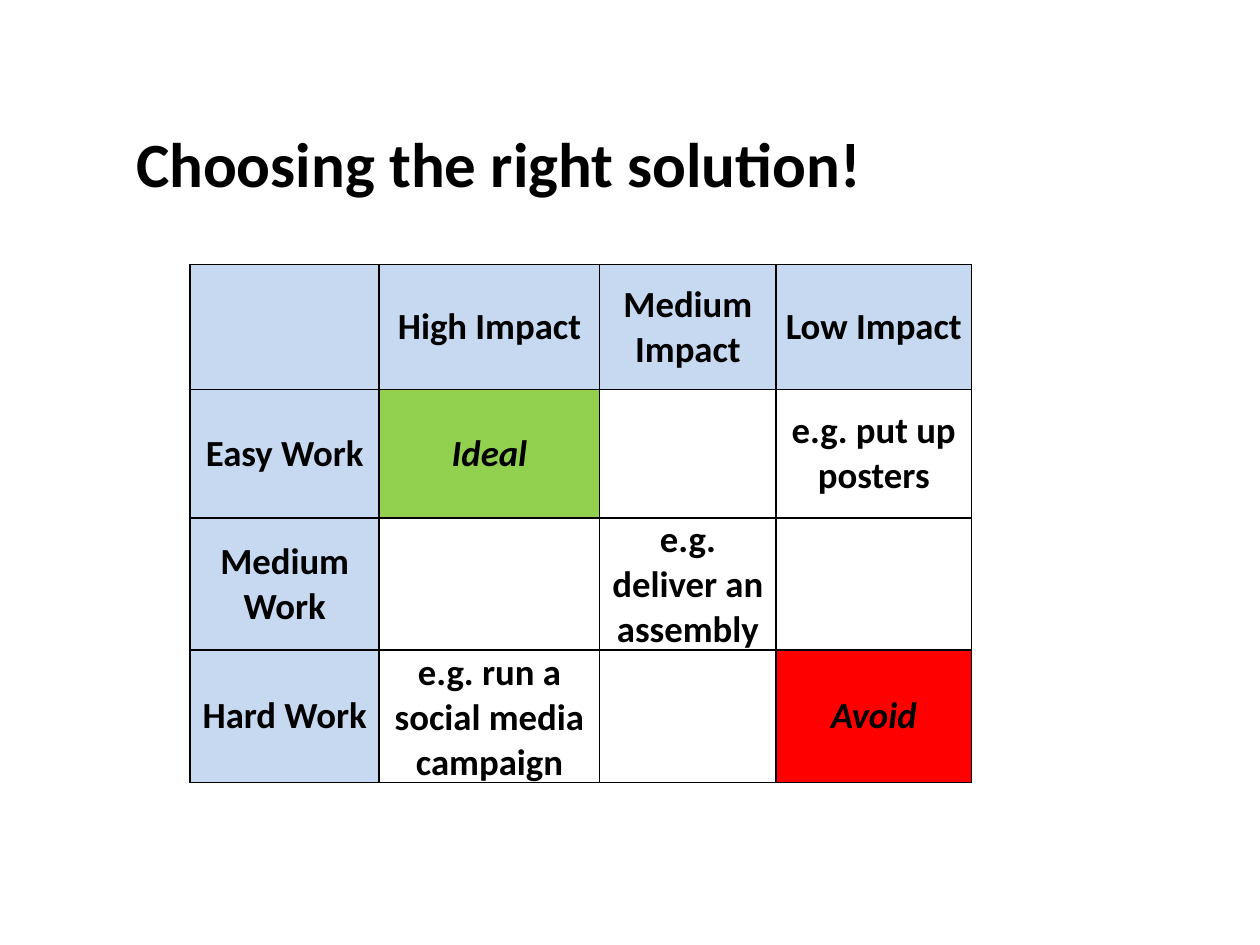
from dataclasses import dataclass

from lxml.etree import SubElement
from pptx import Presentation
from pptx.dml.color import RGBColor
from pptx.enum.text import MSO_ANCHOR, MSO_AUTO_SIZE, PP_ALIGN
from pptx.oxml.ns import qn
from pptx.util import Inches, Pt


@dataclass(frozen=True)
class Theme:
    font: str = "Calibri"
    title_size: float = 36
    cell_size: float = 21
    ink: str = "000000"
    paper: str = "FFFFFF"
    heading: str = "C6D9F1"
    ideal: str = "92D050"
    avoid: str = "FF0000"
    border: float = 1


THEME = Theme()
SLIDE_SIZE = (10, 7.5)
TITLE_BOX = (0.98, 0.94, 6.21, 0.71)

# Impact runs across the matrix, work runs down
MATRIX_ORIGIN = (1.51, 2.1)
COLUMNS = (1.5, 1.75, 1.4, 1.55)
ROWS = (0.99, 1.02, 1.05, 1.05)
MATRIX = (
    ("", "High Impact", "Medium Impact", "Low Impact"),
    ("Easy Work", "Ideal", "", "e.g. put up posters"),
    ("Medium Work", "", "e.g. deliver an assembly", ""),
    ("Hard Work", "e.g. run a social media campaign", "", "Avoid"),
)
VERDICTS = {"Ideal": THEME.ideal, "Avoid": THEME.avoid}


def apply(target, formats):
    for name, value in formats.items():
        setattr(target, name, value)


def style_paragraph(paragraph, size, align, italic=False):
    paragraph.alignment = align
    apply(paragraph.font, {"name": THEME.font, "size": Pt(size),
                           "bold": True, "italic": italic})
    paragraph.font.color.rgb = RGBColor.from_string(THEME.ink)


def add_title(slide, text):
    title = slide.shapes.title
    apply(title, dict(zip(("left", "top", "width", "height"),
                          map(Inches, TITLE_BOX))))
    frame = title.text_frame
    frame.text = text
    apply(frame, {"word_wrap": True, "auto_size": MSO_AUTO_SIZE.SHAPE_TO_FIT_TEXT,
                  "vertical_anchor": MSO_ANCHOR.TOP})
    style_paragraph(frame.paragraphs[0], THEME.title_size, PP_ALIGN.LEFT)


def add_borders(cell):
    properties = cell._tc.get_or_add_tcPr()
    # Border lines come before the fill in the cell properties
    for index, side in enumerate(("lnL", "lnR", "lnT", "lnB")):
        line = SubElement(properties, qn(f"a:{side}"), w=str(Pt(THEME.border)))
        fill = SubElement(line, qn("a:solidFill"))
        SubElement(fill, qn("a:srgbClr"), val=THEME.ink)
        properties.insert(index, line)


def fill_cell(cell, text, is_heading):
    color = THEME.heading if is_heading else VERDICTS.get(text, THEME.paper)
    cell.fill.solid()
    cell.fill.fore_color.rgb = RGBColor.from_string(color)
    add_borders(cell)
    apply(cell, {"margin_left": Inches(0.07), "margin_right": Inches(0.07),
                 "margin_top": 0, "margin_bottom": 0,
                 "vertical_anchor": MSO_ANCHOR.MIDDLE})
    cell.text = text
    style_paragraph(cell.text_frame.paragraphs[0], THEME.cell_size,
                    PP_ALIGN.CENTER, italic=text in VERDICTS)


def add_matrix(slide):
    box = (*MATRIX_ORIGIN, sum(COLUMNS), sum(ROWS))
    matrix = slide.shapes.add_table(len(ROWS), len(COLUMNS),
                                    *map(Inches, box)).table
    for column, width in zip(matrix.columns, COLUMNS):
        column.width = Inches(width)
    for row, height in zip(matrix.rows, ROWS):
        row.height = Inches(height)
    for r, texts in enumerate(MATRIX):
        for c, text in enumerate(texts):
            fill_cell(matrix.cell(r, c), text, is_heading=r == 0 or c == 0)


def main():
    deck = Presentation()
    deck.slide_width, deck.slide_height = map(Inches, SLIDE_SIZE)
    slide = deck.slides.add_slide(deck.slide_layouts[5])
    add_title(slide, "Choosing the right solution!")
    add_matrix(slide)
    deck.save("out.pptx")


if __name__ == "__main__":
    main()
